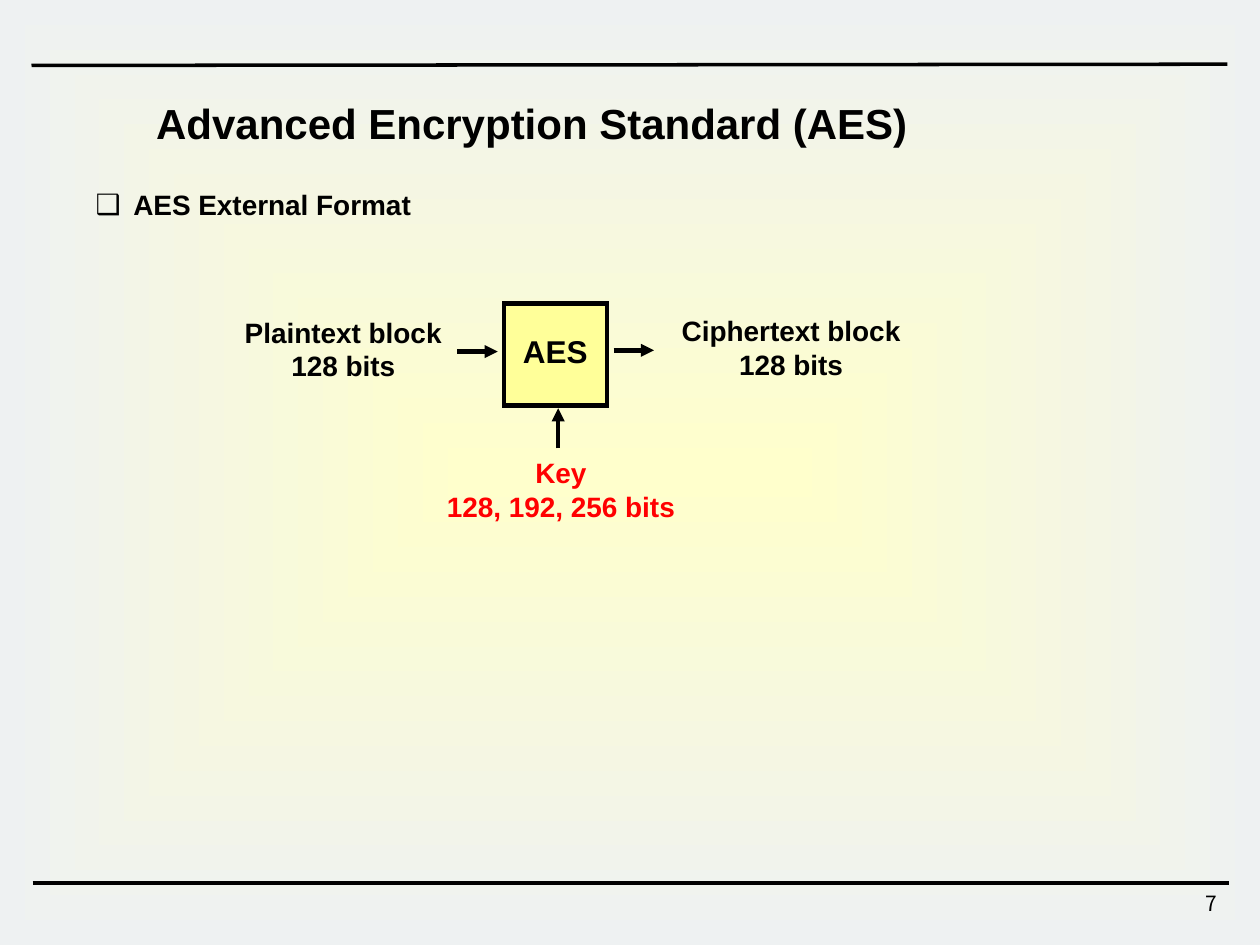
from lxml import etree
from pptx import Presentation
from pptx.dml.color import RGBColor
from pptx.enum import shapes, text
from pptx.oxml import parse_xml
from pptx.oxml.ns import nsdecls, qn
from pptx.util import Pt

BLACK, RED = "000000", "FF0000"
LEFT, CENTER, RIGHT = text.PP_ALIGN.LEFT, text.PP_ALIGN.CENTER, text.PP_ALIGN.RIGHT


def write(box, lines, size, color=BLACK, align=CENTER, inset=(0, 0),
          wrap=False, bold=True, font="Arial"):
    """Fill the box's text frame, one paragraph per line, in a single style."""
    frame = box.text_frame
    frame.text = "\n".join(lines)
    frame.word_wrap = wrap
    frame.vertical_anchor = text.MSO_ANCHOR.TOP
    frame.margin_left = frame.margin_right = Pt(inset[0])
    frame.margin_top = frame.margin_bottom = Pt(inset[1])
    for paragraph in frame.paragraphs:
        paragraph.alignment = align
        paragraph.font.name = font
        paragraph.font.size = Pt(size)
        paragraph.font.bold = bold
        paragraph.font.color.rgb = RGBColor.from_string(color)
    return frame


def draw_line(start, end, width, arrow=False):
    points = [Pt(value) for value in (*start, *end)]
    line = slide.shapes.add_connector(shapes.MSO_CONNECTOR.STRAIGHT, *points)
    line.line.color.rgb = RGBColor.from_string(BLACK)
    line.line.width = Pt(width)
    if arrow:
        etree.SubElement(line.line._get_or_add_ln(), qn("a:tailEnd"), type="triangle")
    etree.SubElement(line._element.spPr, qn("a:effectLst"))


prs = Presentation()
prs.slide_width, prs.slide_height = Pt(720), Pt(540)
slide = prs.slides.add_slide(prs.slide_layouts[5])

# Backdrop: a glow from the centre, behind the title
backdrop = slide.shapes.add_shape(shapes.MSO_SHAPE.RECTANGLE, 0, 0, Pt(720), Pt(540))
backdrop.shadow.inherit = False
backdrop.line.fill.background()
backdrop.fill.gradient()
glow = parse_xml(
    f'<a:gradFill {nsdecls("a")} rotWithShape="1"><a:gsLst>'
    '<a:gs pos="0"><a:srgbClr val="FFFFCC"/></a:gs>'
    '<a:gs pos="100000"><a:srgbClr val="EEF1F2"/></a:gs></a:gsLst>'
    '<a:path path="rect"><a:fillToRect l="50000" t="50000" r="50000" b="50000"/></a:path>'
    '</a:gradFill>')
properties = backdrop._element.spPr
properties.replace(properties.find(qn("a:gradFill")), glow)
slide.shapes._spTree.insert(2, backdrop._element)

# Page rules and number
draw_line((18, 37.4), (701.3, 36.7), 2)
draw_line((18.7, 504.7), (702, 504.7), 2)
page_number = slide.shapes.add_textbox(Pt(553), Pt(505.4), Pt(149.8), Pt(23.8))
write(page_number, ["7"], 12, align=RIGHT, inset=(7.2, 3.6), wrap=True,
      bold=False, font="Noto Sans CJK KR")

# Title and heading
title = slide.shapes.title
title.left, title.top, title.width, title.height = Pt(82), Pt(52.2), Pt(460), Pt(36)
write(title, ["Advanced Encryption Standard (AES)"], 24, align=LEFT, inset=(7.2, 3.6))

heading = slide.shapes.add_textbox(Pt(54.7), Pt(105.4), Pt(599.8), Pt(20.9))
topic = write(heading, ["AES External Format"], 16, align=LEFT, wrap=True).paragraphs[0]
topic.line_spacing = 1.1
topic.space_before = Pt(1.6)
bullet = topic._p.get_or_add_pPr()
bullet.set("marL", str(Pt(21.5)))
bullet.set("indent", str(-Pt(21.5)))
bullet_color = etree.SubElement(bullet, qn("a:buClr"))
etree.SubElement(bullet_color, qn("a:srgbClr"), val=BLACK)
etree.SubElement(bullet, qn("a:buFont"), typeface="Arial")
etree.SubElement(bullet, qn("a:buChar"), char="❑")
# Paragraph properties need the bullet before the default run style
bullet.append(bullet.find(qn("a:defRPr")))

# Cipher box with its inputs and output
cipher = slide.shapes.add_shape(shapes.MSO_SHAPE.RECTANGLE,
                                Pt(288), Pt(173.5), Pt(59), Pt(58.3))
cipher.shadow.inherit = False
cipher.fill.solid()
cipher.fill.fore_color.rgb = RGBColor.from_string("FFFF99")
cipher.line.color.rgb = RGBColor.from_string(BLACK)
cipher.line.width = Pt(2.5)
etree.SubElement(cipher.line._get_or_add_ln(), qn("a:miter"), lim="800000")

for start, end in [((261.4, 200.9), (284.4, 200.9)),
                   ((319, 256.3), (319, 233.3)),
                   ((350.6, 200.2), (373.7, 200.2))]:
    draw_line(start, end, 2.5, arrow=True)

# Labels are centred on their x and have room to spare on both sides
for center, top, width, height, lines, size, color in [
    (317.3, 189.8, 54, 21.6, ["AES"], 18, BLACK),
    (196.2, 180.2, 124, 38.2, ["Plaintext block", "128 bits"], 16, BLACK),
    (452.1, 179.3, 136, 38.2, ["Ciphertext block", "128 bits"], 16, BLACK),
    (320.5, 260.3, 144, 38.9, ["Key", "128, 192, 256 bits"], 16, RED),
]:
    label = slide.shapes.add_textbox(Pt(center - width / 2), Pt(top), Pt(width), Pt(height))
    write(label, lines, size, color)

prs.save("out.pptx")
